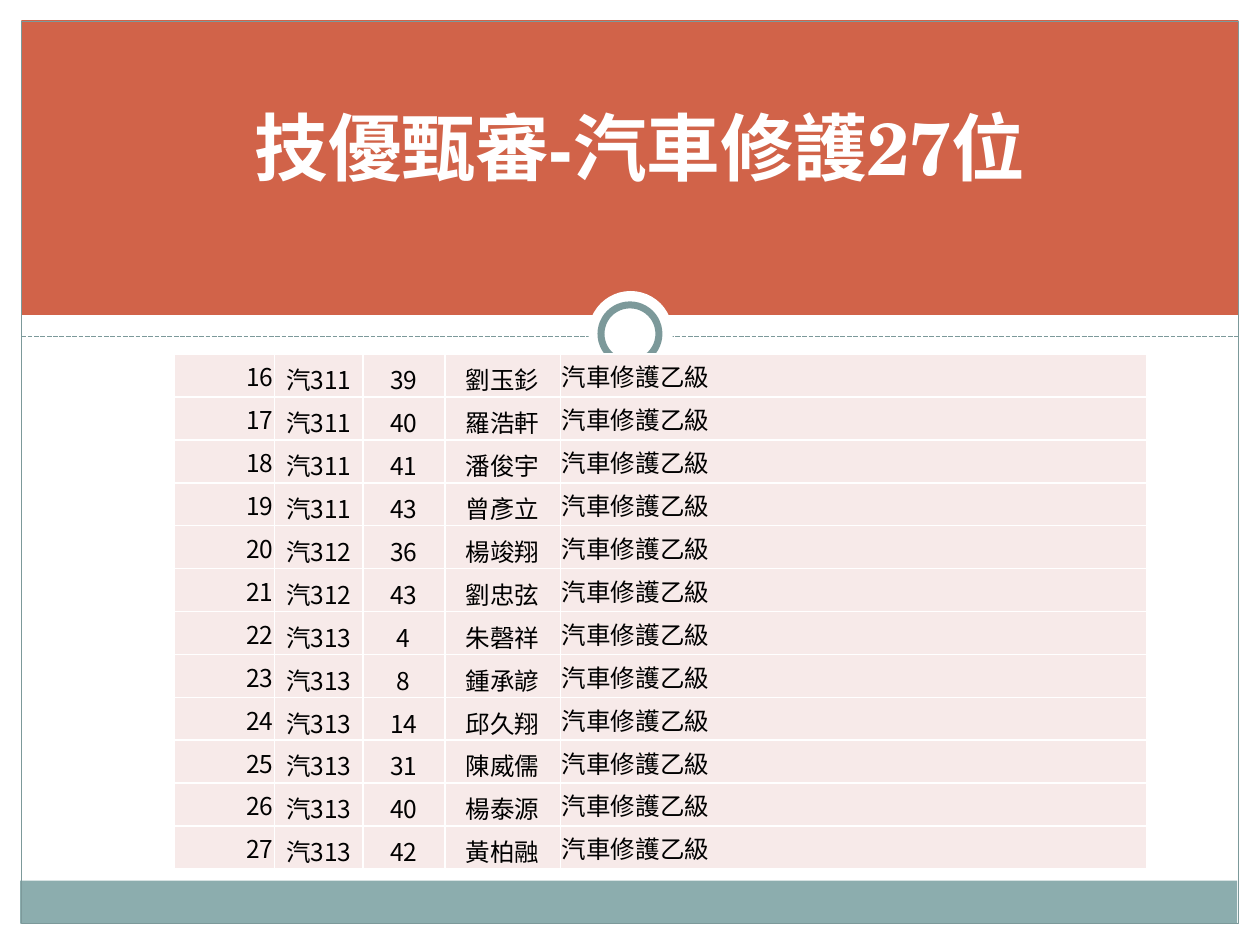
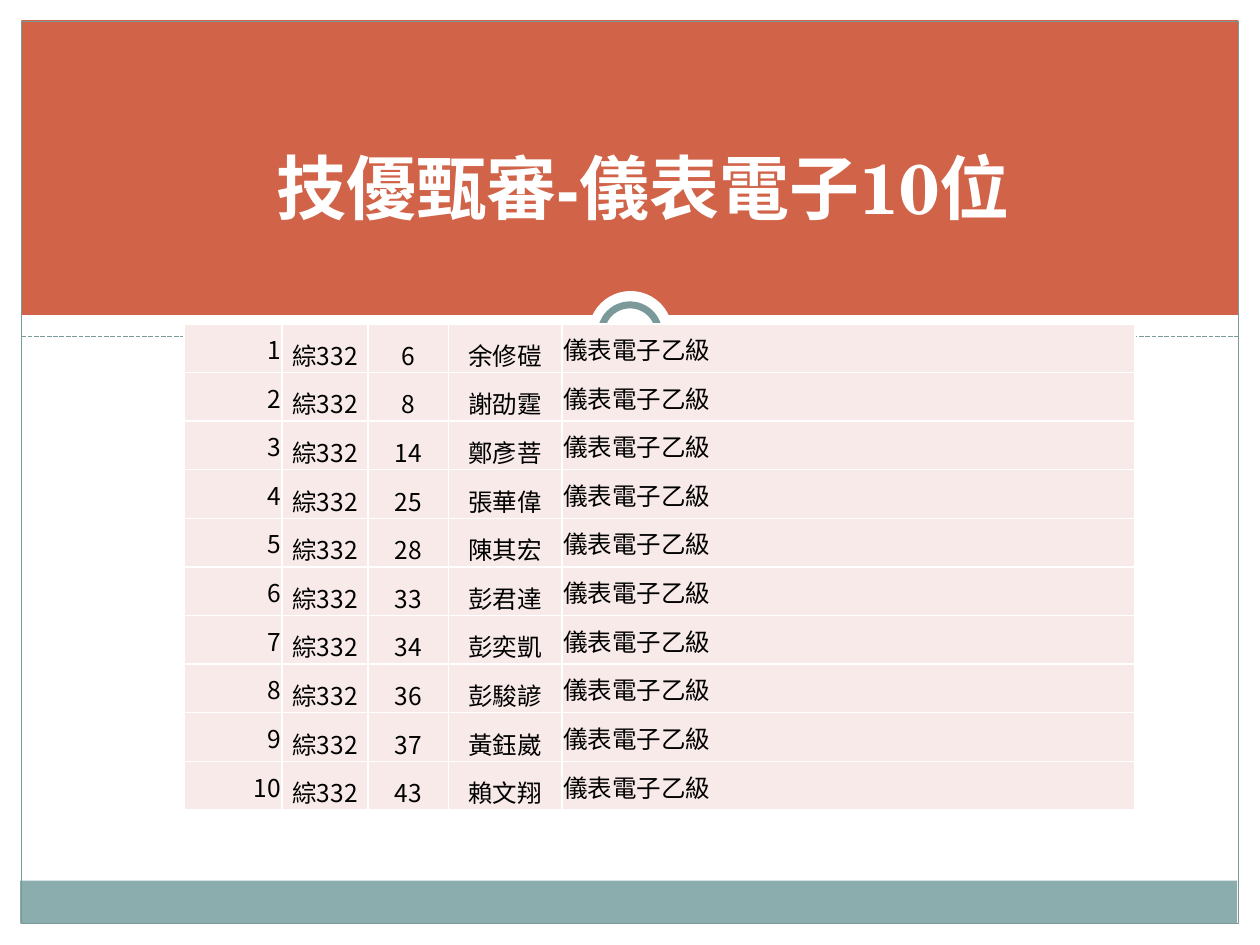
"""Builds two award-list slides with a shared frame, title band and roster table."""
from lxml.etree import SubElement
from pptx import Presentation
from pptx.dml.color import RGBColor
from pptx.enum.dml import MSO_LINE
from pptx.enum.shapes import MSO_CONNECTOR, MSO_SHAPE
from pptx.enum.text import MSO_ANCHOR, MSO_AUTO_SIZE, PP_ALIGN
from pptx.oxml.ns import qn
from pptx.util import Inches, Pt

WHITE = RGBColor(0xFF, 0xFF, 0xFF)
BLACK = RGBColor(0x00, 0x00, 0x00)
ORANGE = RGBColor(0xD1, 0x63, 0x49)
TEAL = RGBColor(0x8C, 0xAD, 0xAE)
DARK_TEAL = RGBColor(0x7C, 0x99, 0x9A)
PALE_PINK = RGBColor(0xF7, 0xEA, 0xE9)
TITLE_FONT = "TeX Gyre Schola"
BODY_FONT = "Noto Sans CJK SC"

BANDS = [
    ((0, 7.33, 10, 0.17), WHITE),
    ((0, 0, 10, 0.17), WHITE),
    ((9.83, 0.02, 0.17, 7.5), WHITE),
    ((0.17, 2.5, 9.66, 0.33), WHITE),
    ((0.17, 0.16, 9.66, 2.34), ORANGE),
    ((0.16, 6.99, 9.66, 0.34), TEAL),
]
COLUMN_STYLES = [
    (PP_ALIGN.RIGHT, MSO_ANCHOR.MIDDLE),
    (PP_ALIGN.CENTER, MSO_ANCHOR.BOTTOM),
    (PP_ALIGN.CENTER, MSO_ANCHOR.BOTTOM),
    (PP_ALIGN.CENTER, MSO_ANCHOR.BOTTOM),
    (PP_ALIGN.LEFT, MSO_ANCHOR.MIDDLE),
]
AUTO_STUDENTS = [
    ("汽311", 39, "劉玉釤"),
    ("汽311", 40, "羅浩軒"),
    ("汽311", 41, "潘俊宇"),
    ("汽311", 43, "曾彥立"),
    ("汽312", 36, "楊竣翔"),
    ("汽312", 43, "劉忠弦"),
    ("汽313", 4, "朱磬祥"),
    ("汽313", 8, "鍾承諺"),
    ("汽313", 14, "邱久翔"),
    ("汽313", 31, "陳威儒"),
    ("汽313", 40, "楊泰源"),
    ("汽313", 42, "黃柏融"),
]
METER_STUDENTS = [
    ("綜332", 6, "余修磑"),
    ("綜332", 8, "謝劭霆"),
    ("綜332", 14, "鄭彥菩"),
    ("綜332", 25, "張華偉"),
    ("綜332", 28, "陳其宏"),
    ("綜332", 33, "彭君達"),
    ("綜332", 34, "彭奕凱"),
    ("綜332", 36, "彭駿諺"),
    ("綜332", 37, "黃鈺崴"),
    ("綜332", 43, "賴文翔"),
]


class AwardDeck:
    """Holds the deck style and the current slide."""

    def __init__(self):
        """Start an empty 10 by 7.5 inch deck."""
        self.deck = Presentation()
        self.deck.slide_width, self.deck.slide_height = Inches(10), Inches(7.5)
        self.slide = None

    def shape(self, kind, box, fill=None, line=None, width=0.75):
        """Add a flat preset shape."""
        shape = self.slide.shapes.add_shape(kind, *map(Inches, box))
        shape.shadow.inherit = False
        if fill is None:
            shape.fill.background()
        else:
            shape.fill.solid()
            shape.fill.fore_color.rgb = fill
        if line is None:
            shape.line.fill.background()
        else:
            shape.line.color.rgb = line
            shape.line.width = Pt(width)

    def dashed_rule(self, left, right, y):
        """Add a horizontal dashed rule."""
        rule = self.slide.shapes.add_connector(
            MSO_CONNECTOR.STRAIGHT, Inches(left), Inches(y), Inches(right), Inches(y))
        rule.line.color.rgb = DARK_TEAL
        rule.line.width = Pt(0.9)
        rule.line.dash_style = MSO_LINE.SQUARE_DOT
        SubElement(rule._element.spPr, qn("a:effectLst"))

    def run(self, paragraph, text, font, size, color, bold=False):
        """Add a run with one typeface for Latin and East Asian text."""
        run = paragraph.add_run()
        run.text = text
        run.font.name = font
        run.font.size = Pt(size)
        run.font.bold = bold
        run.font.color.rgb = color
        SubElement(run.font._element, qn("a:ea")).set("typeface", BODY_FONT)

    def new_slide(self):
        """Start a slide with the shared bands, frame and ring."""
        self.slide = self.deck.slides.add_slide(self.deck.slide_layouts[5])
        for box, fill in BANDS:
            self.shape(MSO_SHAPE.RECTANGLE, box, fill)
        self.shape(MSO_SHAPE.RECTANGLE, (0.17, 0.17, 9.66, 7.16), line=DARK_TEAL)
        self.dashed_rule(0.17, 9.83, 2.67)
        self.shape(MSO_SHAPE.OVAL, (4.67, 2.31, 0.67, 0.67), WHITE)
        self.shape(MSO_SHAPE.OVAL, (4.77, 2.42, 0.46, 0.46), WHITE, DARK_TEAL, 4)

    def title(self, text, box, size):
        """Place the title in front of the orange band."""
        title = self.slide.shapes.title
        title.left, title.top, title.width, title.height = map(Inches, box)
        self.slide.shapes._spTree.append(title._element)
        frame = title.text_frame
        frame.word_wrap = True
        frame.auto_size = MSO_AUTO_SIZE.NONE
        frame.vertical_anchor = MSO_ANCHOR.BOTTOM
        paragraph = frame.paragraphs[0]
        paragraph.alignment = PP_ALIGN.CENTER
        self.run(paragraph, text, TITLE_FONT, size, WHITE, bold=True)

    def cell(self, cell, text, align, anchor):
        """Fill, border and write one table cell."""
        cell.margin_left = cell.margin_top = cell.margin_right = Inches(0.01)
        cell.margin_bottom = 0
        cell.vertical_anchor = anchor
        properties = cell._tc.get_or_add_tcPr()
        for side in ("lnL", "lnR", "lnT", "lnB"):
            border = SubElement(properties, qn(f"a:{side}"), w=str(Pt(1)))
            color = SubElement(SubElement(border, qn("a:solidFill")), qn("a:srgbClr"))
            color.set("val", str(WHITE))
        cell.fill.solid()
        cell.fill.fore_color.rgb = PALE_PINK
        paragraph = cell.text_frame.paragraphs[0]
        paragraph.alignment = align
        self.run(paragraph, text, BODY_FONT, 14, BLACK)

    def roster(self, students, certificate, first, corner, widths, height):
        """Add the numbered table of students and their certificate."""
        box = (*corner, sum(widths), height)
        table = self.slide.shapes.add_table(
            len(students), len(widths), *map(Inches, box)).table
        table.first_row = table.horz_banding = False
        for column, width in zip(table.columns, widths):
            column.width = Inches(width)
        for row, (number, student) in zip(table.rows, enumerate(students, first)):
            row.height = Inches(height / len(students))
            values = (number, *student, certificate)
            for cell, value, style in zip(row.cells, values, COLUMN_STYLES):
                self.cell(cell, str(value), *style)


def main():
    """Build and save both slides."""
    deck = AwardDeck()
    deck.new_slide()
    deck.title("技優甄審-汽車修護27位", (0.83, 0.52, 8.5, 1.04), 42)
    deck.roster(AUTO_STUDENTS, "汽車修護乙級", 16, (1.38, 2.81),
                (0.8, 0.7, 0.65, 0.92, 4.65), 4.09)
    deck.new_slide()
    deck.title("技優甄審-儀表電子10位", (0.28, 0.99, 9.65, 0.87), 40)
    deck.roster(METER_STUDENTS, "儀表電子乙級", 1, (1.46, 2.57),
                (0.78, 0.68, 0.64, 0.9, 4.55), 3.86)
    deck.deck.save("out.pptx")


if __name__ == "__main__":
    main()
